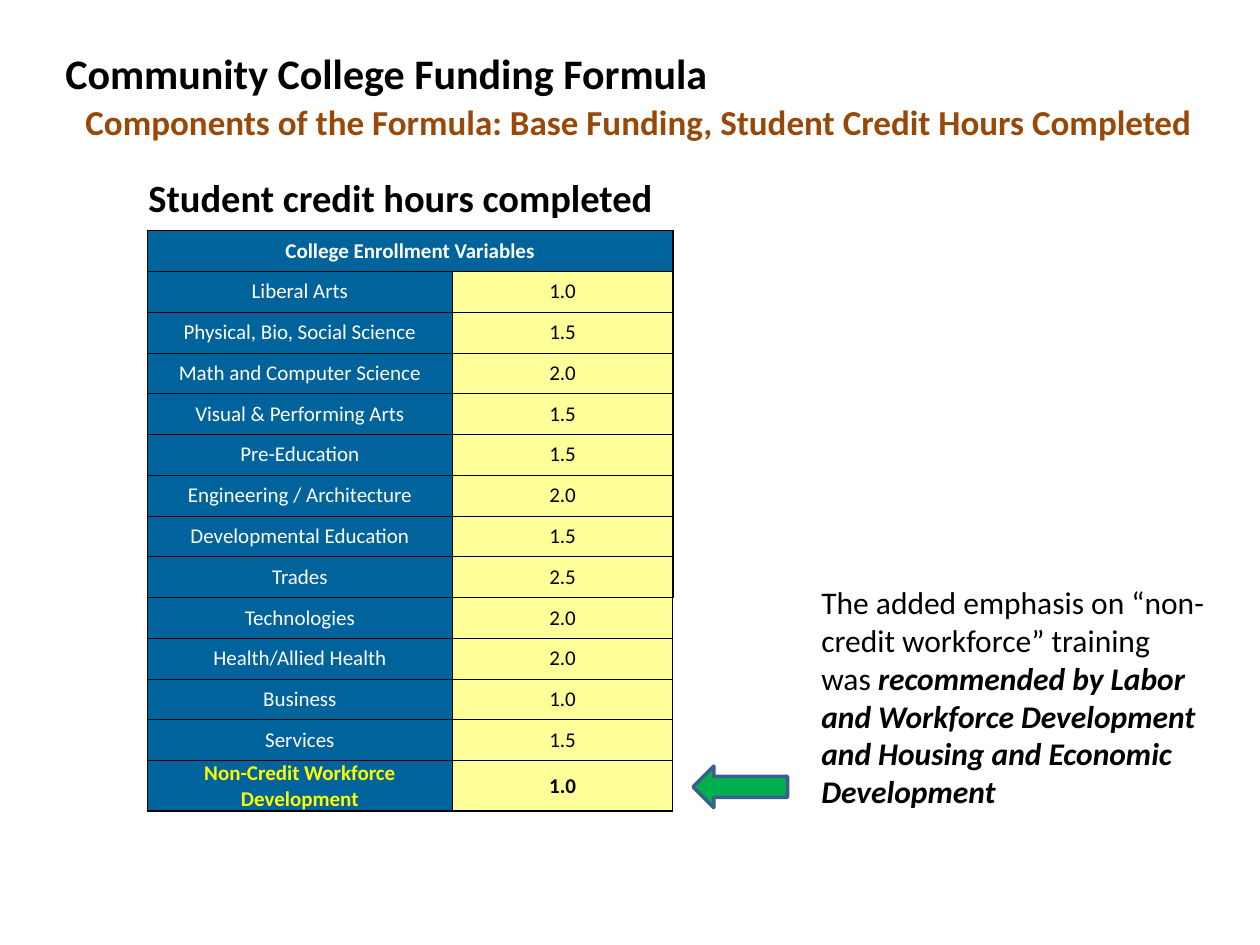
from lxml import etree
from pptx import Presentation
from pptx import util as u
from pptx.dml.color import RGBColor
from pptx.enum import shapes, text
from pptx.oxml.ns import qn

FONT = "Calibri"
BLUE, YELLOW, BLACK, WHITE = "00639C", "FFFF99", "000000", "FFFFFF"
THIN, THICK = 0.5, 1
ENROLLMENT = [
    ("Liberal Arts", "1.0"),
    ("Physical, Bio, Social Science", "1.5"),
    ("Math and Computer Science", "2.0"),
    ("Visual & Performing Arts", "1.5"),
    ("Pre-Education", "1.5"),
    ("Engineering / Architecture", "2.0"),
    ("Developmental Education", "1.5"),
    ("Trades", "2.5"),
    ("Technologies", "2.0"),
    ("Health/Allied Health", "2.0"),
    ("Business", "1.0"),
    ("Services", "1.5"),
    ("Non-Credit Workforce Development", "1.0"),
]
THICK_RIGHT_ROWS = 8


def rgb(value):
    """Turn a hex string into a colour."""
    return RGBColor.from_string(value)


def style(font, size, color=BLACK, bold=False):
    """Set the typeface, size, colour and weight of a font."""
    font.name, font.size, font.bold = FONT, u.Pt(size), bold
    font.color.rgb = rgb(color)


def add_text(page, place, content, size, color=BLACK, bold=True, wrap=True, emphasis=""):
    """Add a text box of one paragraph, with an optional bold italic ending."""
    box = page.shapes.add_textbox(*map(u.Inches, place))
    frame = box.text_frame
    frame.word_wrap = wrap
    frame.auto_size = text.MSO_AUTO_SIZE.SHAPE_TO_FIT_TEXT
    para = frame.paragraphs[0]
    style(para.font, size, color, bold)
    para.add_run().text = content
    if emphasis:
        span = para.add_run()
        span.text = emphasis
        span.font.bold = span.font.italic = True


def set_borders(cell, left, right, top, bottom):
    """Draw the four borders of a cell in black at widths in points."""
    properties = cell._tc.get_or_add_tcPr()
    sides = zip(("a:lnL", "a:lnR", "a:lnT", "a:lnB"), (left, right, top, bottom))
    for index, (tag, width) in enumerate(sides):
        line = etree.Element(qn(tag), w=str(u.Pt(width)))
        fill = etree.SubElement(line, qn("a:solidFill"))
        etree.SubElement(fill, qn("a:srgbClr"), val=BLACK)
        properties.insert(index, line)


def fill_cell(cell, content, fill, color, bold, borders):
    """Write centred text in a cell and set its fill and borders."""
    cell.margin_left = cell.margin_right = cell.margin_top = cell.margin_bottom = 0
    cell.vertical_anchor = text.MSO_ANCHOR.MIDDLE
    cell.fill.solid()
    cell.fill.fore_color.rgb = rgb(fill)
    para = cell.text_frame.paragraphs[0]
    para.text = content
    para.alignment = text.PP_ALIGN.CENTER
    style(para.font, 12, color, bold)
    set_borders(cell, *borders)


def add_enrollment_table(page):
    """Add the table of enrollment variables and their weights."""
    last = len(ENROLLMENT)
    place = map(u.Inches, (1.17, 1.83, 4.17, 4.61))
    table = page.shapes.add_table(last + 1, 2, *place).table
    for column, width in zip(table.columns, (2.42, 1.75)):
        column.width = u.Inches(width)
    for row in table.rows:
        row.height = u.Inches(4.21 / last)
    table.rows[last].height = u.Inches(0.4)

    header = table.cell(0, 0)
    header.merge(table.cell(0, 1))
    fill_cell(header, "College Enrollment Variables", BLUE, WHITE, True, [THICK] * 4)
    set_borders(table.cell(0, 1), *[THICK] * 4)
    for row, (subject, weight) in enumerate(ENROLLMENT, 1):
        top = THICK if row == 1 else THIN
        bottom = THICK if row == last else THIN
        right = THICK if row <= THICK_RIGHT_ROWS else THIN
        bold = row == last
        color = "FFFF00" if bold else WHITE
        fill_cell(table.cell(row, 0), subject, BLUE, color, bold, (THICK, THIN, top, bottom))
        fill_cell(table.cell(row, 1), weight, YELLOW, BLACK, bold, (THIN, right, top, bottom))


def add_arrow(page, place):
    """Add the green arrow that points left at the table."""
    arrow = page.shapes.add_shape(shapes.MSO_SHAPE.RIGHT_ARROW, *map(u.Inches, place))
    arrow.rotation = 180
    arrow.shadow.inherit = False
    arrow.fill.solid()
    arrow.fill.fore_color.rgb = rgb("00B050")
    arrow.line.color.rgb = rgb("3A5F8C")
    arrow.line.width = u.Pt(2)


def main():
    """Build the funding formula slide and save it."""
    deck = Presentation()
    deck.slide_width, deck.slide_height = u.Inches(10), u.Inches(7.5)
    page = deck.slides.add_slide(deck.slide_layouts[6])
    add_text(page, (0.42, 0.33, 7, 0.91), "Community College Funding Formula", 24)
    add_enrollment_table(page)
    add_text(page, (1.08, 1.33, 4.32, 0.47), "Student credit hours completed", 22, wrap=False)
    add_arrow(page, (5.5, 6.08, 0.75, 0.33))
    add_text(
        page, (6.42, 4.58, 3.25, 1.92),
        "The added emphasis on “non-credit workforce” training was ", 18, bold=False,
        emphasis="recommended by Labor and Workforce Development "
                 "and Housing and Economic Development",
    )
    add_text(
        page, (0.58, 0.75, 9.06, 0.74),
        "Components of the Formula: Base Funding, Student Credit Hours Completed",
        20, "984807", wrap=False,
    )
    deck.save("out.pptx")


if __name__ == "__main__":
    main()
